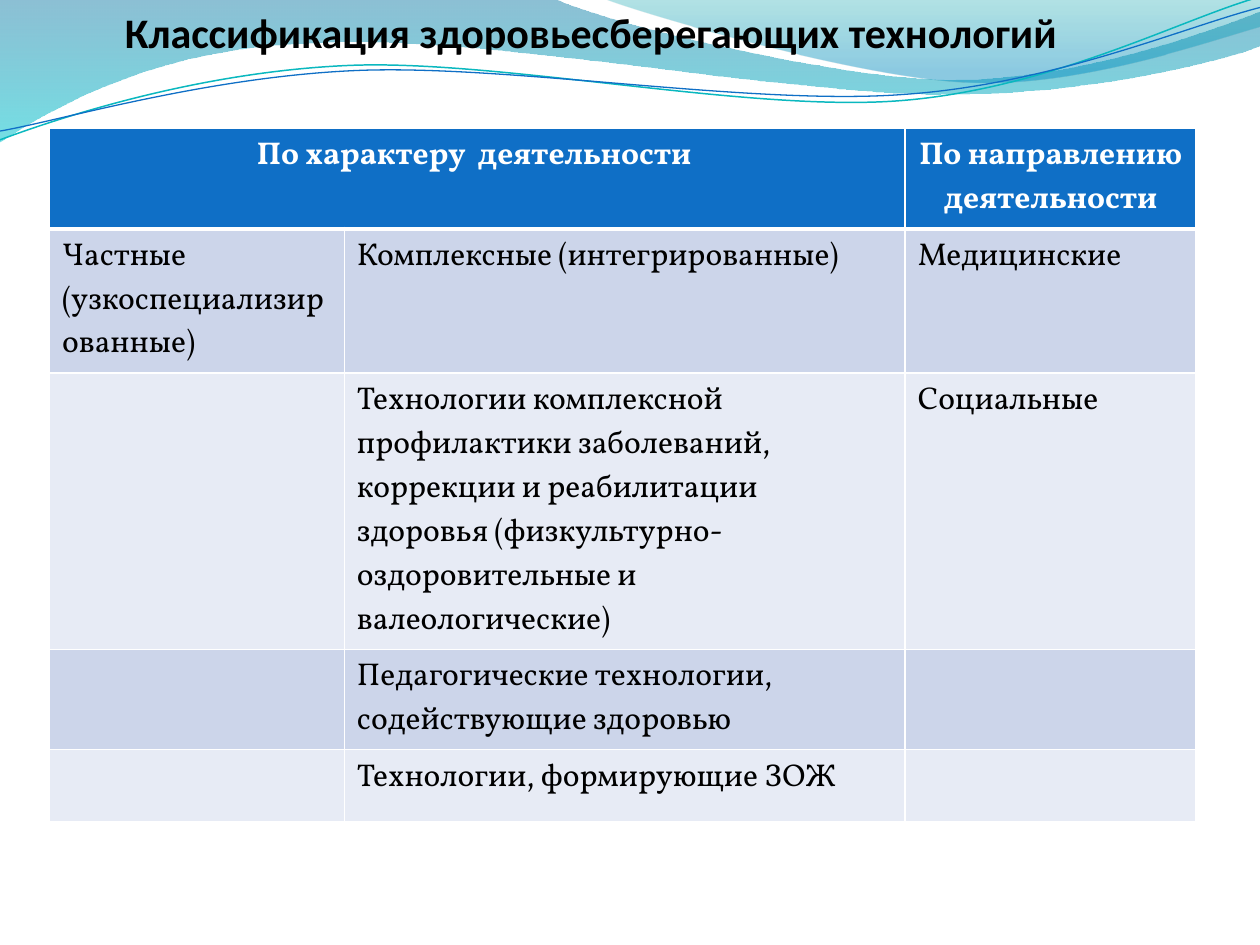
import math

from lxml import etree
from pptx import Presentation
from pptx import util as u
from pptx.dml.color import RGBColor
from pptx.enum import text
from pptx.oxml import ns

BLACK = RGBColor(0x00, 0x00, 0x00)
WHITE = RGBColor(0xFF, 0xFF, 0xFF)
HEADER_BLUE = RGBColor(0x0F, 0x6F, 0xC6)
ROW_DARK = RGBColor(0xCC, 0xD5, 0xEA)
ROW_LIGHT = RGBColor(0xE7, 0xEB, 0xF5)
WAVE_TEAL = RGBColor(0x0A, 0xB8, 0xBF)
DEEP_BLUE = RGBColor(0x00, 0x74, 0xA1)
BRIGHT_CYAN = RGBColor(0x00, 0xC6, 0xCF)
DARK_CYAN = RGBColor(0x00, 0xA1, 0xA9)
SKY_BLUE = RGBColor(0x00, 0x8B, 0xBF)

WAVE_TILT = -2.7

WIDE_BAND = [
    [(0, 0)],
    [(316.8, -0.7)],
    [(342.7, 12.2), (478.1, 45.4), (545.8, 45.4)],
    [(614.2, 45.4), (689.8, 18.7), (720, 6.5)],
    [(720.7, 25.9)],
    [(708.5, 31.7), (626.4, 54.7), (537.1, 54)],
    [(447.8, 54), (275, 20.2), (185, 24.5)],
    [(92.2, 25.9), (33.1, 59.8), (-0.7, 81.4)],
    [(0, 0)],
]
RIGHT_BAND = [
    [(344.9, -0.7)],
    [(366.5, 7.9), (491, 44.6), (553.7, 46.8)],
    [(616.3, 49.7), (691.9, 23), (720, 15.1)],
    [(720, 0)],
    [(344.9, -0.7)],
]
TEAL_WAVE = [
    [(0, 79.9)],
    [(34.6, 67), (113.8, 41), (199.4, 37.4)],
    [(284.4, 33.8), (427, 64.1), (513.4, 57.6)],
    [(599.8, 51.1), (675.4, 10.8), (718.6, -1.4)],
]
BLUE_WAVE = [
    [(0, 74.9)],
    [(33.8, 69.1), (118.1, 43.9), (203.8, 40.3)],
    [(290.2, 36.7), (429.8, 60.5), (516.2, 54)],
    [(601.9, 48.2), (677.5, 15.1), (720, 4.3)],
]

COLUMN_WIDTHS = [168.5, 320.5, 166.3]
ROW_HEIGHT = 41
TABLE_HEIGHT = 329
CLASSIFICATION = [
    ["По характеру  деятельности ", "", "По направлению деятельности"],
    ["Частные  (узкоспециализированные)", "Комплексные (интегрированные)", "Медицинские"],
    ["", "Технологии комплексной профилактики заболеваний, коррекции и "
     "реабилитации здоровья (физкультурно-оздоровительные и валеологические)", "Социальные"],
    ["", "Педагогические технологии, содействующие здоровью", ""],
    ["", "Технологии, формирующие ЗОЖ", ""],
]


def turn(outline, pivot, degrees):
    cos, sin = math.cos(math.radians(degrees)), math.sin(math.radians(degrees))
    px, py = pivot
    return [[(px + (x - px) * cos - (y - py) * sin, py + (x - px) * sin + (y - py) * cos)
             for x, y in segment] for segment in outline]


def bend(shape, outline):
    trail = shape.element.spPr.find(".//" + ns.qn("a:path"))
    strokes = iter(trail.findall(ns.qn("a:lnTo")))
    for segment in outline[1:]:
        stroke = next(strokes)
        if len(segment) == 3:
            curve = etree.Element(ns.qn("a:cubicBezTo"))
            stroke.addprevious(curve)
            for part in (stroke, next(strokes), next(strokes)):
                curve.append(part[0])
                trail.remove(part)


def add_outline(slide, outline, close):
    corners = [(u.Pt(x), u.Pt(y)) for segment in outline for x, y in segment]
    builder = slide.shapes.build_freeform(*corners[0])
    builder.add_line_segments(corners[1:], close=close)
    shape = builder.convert_to_shape()
    bend(shape, outline)
    shape.shadow.inherit = False
    return shape


def add_band(slide, outline, stops):
    band = add_outline(slide, outline, close=True)
    band.line.fill.background()
    band.fill.gradient()
    band.fill.gradient_angle = 270
    for stop, (position, color, _) in zip(band.fill.gradient_stops, stops):
        stop.position = position
        stop.color.rgb = color
    tints = band.element.spPr.findall(".//" + ns.qn("a:gs") + "/" + ns.qn("a:srgbClr"))
    for tint, (_, _, opacity) in zip(tints, stops):
        etree.SubElement(tint, ns.qn("a:alpha"), val=str(opacity * 1000))


def add_wave(slide, outline, pivot, color, width):
    wave = add_outline(slide, turn(outline, pivot, -WAVE_TILT), close=False)
    wave.rotation = 360 + WAVE_TILT
    wave.fill.background()
    wave.line.color.rgb = color
    wave.line.width = u.Pt(width)


def set_borders(cell, widths):
    properties = cell._tc.get_or_add_tcPr()
    for side, width in widths.items():
        border = etree.SubElement(properties, ns.qn("a:ln" + side), w=str(u.Pt(width)))
        fill = etree.SubElement(border, ns.qn("a:solidFill"))
        etree.SubElement(fill, ns.qn("a:srgbClr"), val=str(WHITE))


def format_text(paragraph, font_name, size, color, bold, centered):
    if centered:
        paragraph.alignment = text.PP_ALIGN.CENTER
    for run in paragraph.runs:
        run.font.name = font_name
        run.font.size = u.Pt(size)
        run.font.bold = bold
        run.font.color.rgb = color


def fill_cell(cell, wording, row):
    header = row == 0
    set_borders(cell, {"L": 1, "R": 1, "T": 1, "B": 3 if header else 1})
    cell.fill.solid()
    cell.fill.fore_color.rgb = HEADER_BLUE if header else (ROW_LIGHT, ROW_DARK)[row % 2]
    if wording:
        cell.text_frame.text = wording
        format_text(cell.text_frame.paragraphs[0], "Vollkorn", 18,
                    WHITE if header else BLACK, header, header)


def add_classification(slide):
    frame = slide.shapes.add_table(
        len(CLASSIFICATION), len(COLUMN_WIDTHS), u.Pt(28.3), u.Pt(73.4),
        u.Pt(sum(COLUMN_WIDTHS)), u.Pt(ROW_HEIGHT * len(CLASSIFICATION)))
    table = frame.table
    for column, width in zip(table.columns, COLUMN_WIDTHS):
        column.width = u.Pt(width)
    for row, wordings in enumerate(CLASSIFICATION):
        for column, wording in enumerate(wordings):
            fill_cell(table.cell(row, column), wording, row)
    table.cell(0, 0).merge(table.cell(0, 1))
    frame.height = u.Pt(TABLE_HEIGHT)


def add_title(slide):
    title = slide.shapes.add_textbox(0, 0, u.Pt(675.4), u.Pt(36))
    frame = title.text_frame
    frame.word_wrap = True
    frame.auto_size = text.MSO_AUTO_SIZE.SHAPE_TO_FIT_TEXT
    frame.vertical_anchor = text.MSO_ANCHOR.MIDDLE
    frame.text = "Классификация здоровьесберегающих технологий"
    format_text(frame.paragraphs[0], "Calibri", 24, BLACK, True, True)


def main():
    deck = Presentation()
    deck.slide_width, deck.slide_height = u.Pt(720), u.Pt(540)
    slide = deck.slides.add_slide(deck.slide_layouts[6])
    add_band(slide, WIDE_BAND, [(0, DEEP_BLUE, 45), (1, BRIGHT_CYAN, 55)])
    add_band(slide, RIGHT_BAND, [(0, DARK_CYAN, 30), (0.8, SKY_BLUE, 45)])
    add_wave(slide, TEAL_WAVE, (359.3, 41.4), WAVE_TEAL, 0.85)
    add_wave(slide, BLUE_WAVE, (359.6, 42.5), HEADER_BLUE, 0.75)
    add_classification(slide)
    add_title(slide)
    deck.save("out.pptx")


if __name__ == "__main__":
    main()
